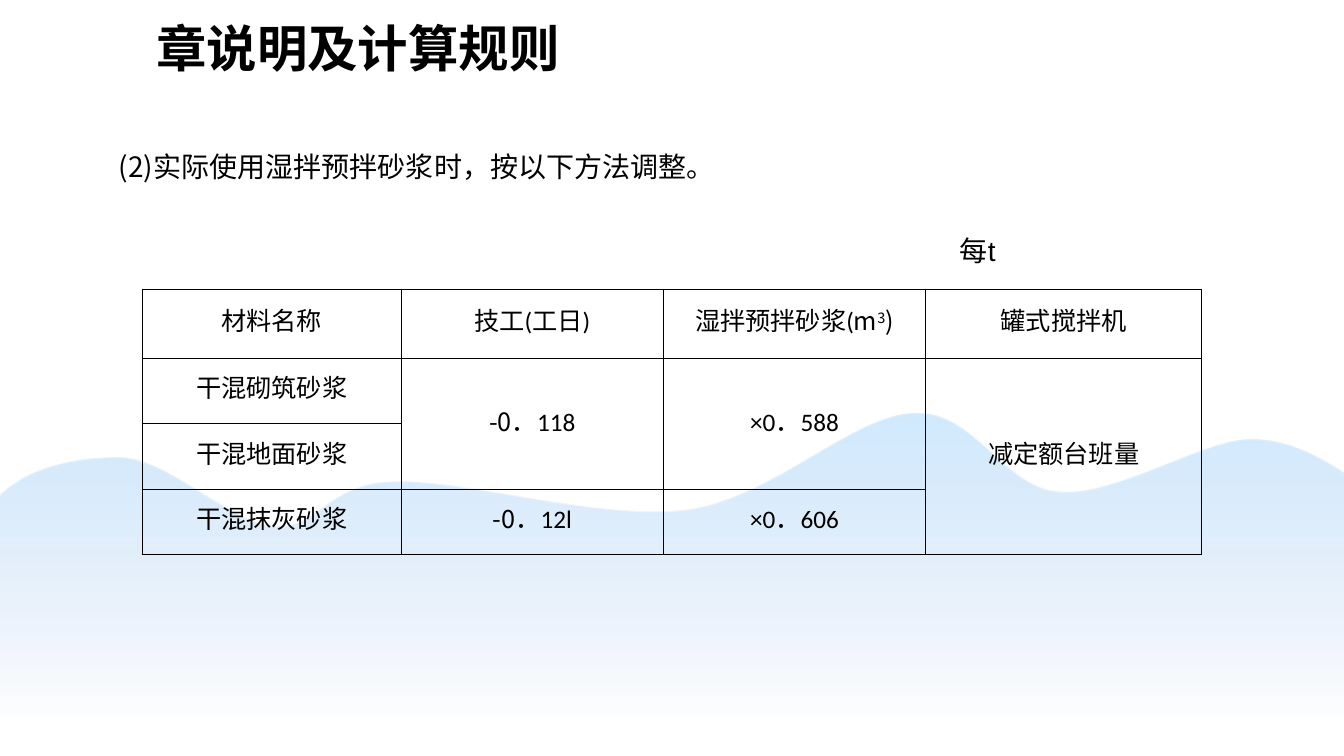
from pptx import Presentation
from pptx import util as u
from pptx.dml.color import RGBColor
from pptx.enum import text
from pptx.oxml import ns
from lxml import etree

SANS = "Noto Sans CJK SC"
BLACK = "000000"

WAVE_BOX = (-0.8, 4.1, 14.72, 4.28)
WAVE_START = (-0.23, 5.26)
# Two control points and an end point for each curve.
WAVE_CURVES = [
    [(0, 4.67), (0.67, 4.54), (1.17, 4.54)],
    [(1.66, 4.53), (2.26, 5.18), (2.71, 5.22)],
    [(3.17, 5.26), (3.22, 4.8), (3.9, 4.78)],
    [(4.58, 4.75), (5.95, 5.17), (6.81, 5.06)],
    [(7.67, 4.94), (8.44, 4.13), (9.06, 4.1)],
    [(9.67, 4.07), (9.95, 4.84), (10.5, 4.88)],
    [(11.05, 4.93), (11.88, 4.39), (12.37, 4.36)],
    [(12.85, 4.34), (13.25, 4.65), (13.43, 4.75)],
    [(13.61, 4.85), (13.44, 4.42), (13.43, 4.98)],
    [(13.43, 5.53), (14.56, 7.52), (13.39, 8.07)],
    [(12.23, 8.62), (8.71, 8.26), (6.43, 8.26)],
    [(4.16, 8.26), (0.85, 8.57), (-0.26, 8.07)],
    [(-1.37, 7.57), (-0.47, 5.85), (-0.23, 5.26)],
]
# Each cell is a list of (text, font, baseline) spans.
ROWS = [
    [[("材料名称", "Calibri", 0)], [("技工(工日)", "Calibri", 0)],
     [("湿拌预拌砂浆(", "Calibri", 0), ("m", SANS, 0), ("3", SANS, 30), (")", SANS, 0)],
     [("罐式搅拌机", "Calibri", 0)]],
    [[("干混砌筑砂浆", "Calibri", 0)], [("-0", SANS, 0), ("．118", "Calibri", 0)],
     [("×0．588", "Calibri", 0)], [("减定额台班量", "Calibri", 0)]],
    [[("干混地面砂浆", "Calibri", 0)], [], [], []],
    [[("干混抹灰砂浆", "Calibri", 0)], [("-0", SANS, 0), ("．12l", "Calibri", 0)],
     [("×0．606", "Calibri", 0)], []],
]
MERGES = [((1, 1), (2, 1)), ((1, 2), (2, 2)), ((1, 3), (3, 3))]


def color(code):
    return RGBColor.from_string(code)


def assign(target, values):
    for name, value in values.items():
        setattr(target, name, value)


def frame_values(*lengths):
    names = ("left", "top", "width", "height")
    return {name: u.Inches(value) for name, value in zip(names, lengths)}


class SlideMaker:
    def __init__(self, page):
        self.page = page

    def spans(self, para, parts, size, bold=False):
        for words, font, baseline in parts:
            span = para.add_run()
            span.text = words
            assign(span.font, {"name": font, "size": u.Pt(size), "bold": bold})
            span.font.color.rgb = color(BLACK)
            props = span._r.get_or_add_rPr()
            etree.SubElement(props, ns.qn("a:ea"), typeface=SANS)
            if baseline:
                props.set("baseline", str(baseline * 1000))

    def place(self, holder, box, frame):
        assign(holder, frame_values(*box))
        assign(holder.text_frame, {"auto_size": text.MSO_AUTO_SIZE.NONE, **frame})

    def title(self, words):
        holder = self.page.shapes.title
        self.place(holder, (1.45, 0.12, 4.26, 0.71),
                   {"word_wrap": False, "vertical_anchor": text.MSO_ANCHOR.TOP})
        para = holder.text_frame.paragraphs[0]
        para.alignment = text.PP_ALIGN.LEFT
        self.spans(para, [(words, "Arial", 0)], 36, bold=True)

    def body(self, lines):
        """Plain lines, each given as (indent, space before, spans)."""
        holder = self.page.placeholders[1]
        self.place(holder, (0.83, 1.27, 11.56, 1.62),
                   {"word_wrap": True, "margin_top": u.Inches(0.13),
                    "vertical_anchor": text.MSO_ANCHOR.TOP})
        for index, (indent, before, parts) in enumerate(lines):
            frame = holder.text_frame
            para = frame.add_paragraph() if index else frame.paragraphs[0]
            assign(para, {"alignment": text.PP_ALIGN.LEFT, "line_spacing": u.Pt(30),
                          "space_before": u.Pt(before)})
            props = para._p.get_or_add_pPr()
            props.set("marL", str(u.Inches(indent)))
            props.set("indent", "0")
            etree.SubElement(props, ns.qn("a:buNone"))
            self.spans(para, parts, 20)

    def wave(self, box, start, curves, stops):
        builder = self.page.shapes.build_freeform(*(u.Inches(v) for v in start))
        ends = [tuple(u.Inches(v) for v in curve[-1]) for curve in curves]
        builder.add_line_segments(ends, close=True)
        shape = builder.convert_to_shape()
        assign(shape, frame_values(*box))
        self.bend(shape, start, curves)
        shape.shadow.inherit = False
        shape.line.fill.background()
        shape.fill.gradient()
        shape.fill.gradient_angle = 270
        for stop, (position, code, _) in zip(shape.fill.gradient_stops, stops):
            stop.position = position
            stop.color.rgb = color(code)
        inks = shape._element.spPr.iter(ns.qn("a:srgbClr"))
        for ink, (_, _, opacity) in zip(inks, stops):
            etree.SubElement(ink, ns.qn("a:alpha"), val=str(opacity * 1000))
        self.page.shapes._spTree.insert(2, shape._element)

    def bend(self, shape, start, curves):
        """Turn the straight segments of a freeform into cubic curves."""
        outline = next(shape._element.iter(ns.qn("a:path")))
        outline.set("w", str(shape.width))
        outline.set("h", str(shape.height))
        for step in list(outline):
            outline.remove(step)
        steps = [("a:moveTo", [start])]
        steps += [("a:cubicBezTo", curve) for curve in curves]
        for tag, points in steps + [("a:close", [])]:
            step = etree.SubElement(outline, ns.qn(tag))
            for x, y in points:
                etree.SubElement(step, ns.qn("a:pt"), x=str(u.Inches(x) - shape.left),
                                 y=str(u.Inches(y) - shape.top))

    def borders(self, cell):
        props = cell._tc.get_or_add_tcPr()
        for index, side in enumerate(("lnL", "lnR", "lnT", "lnB")):
            line = etree.Element(ns.qn("a:" + side), w=str(u.Pt(1)))
            fill = etree.SubElement(line, ns.qn("a:solidFill"))
            etree.SubElement(fill, ns.qn("a:srgbClr"), val=BLACK)
            props.insert(index, line)

    def table(self, rows, merges, left, top, widths, heights):
        box = frame_values(left, top, sum(widths), sum(heights))
        table = self.page.shapes.add_table(len(rows), len(widths), **box).table
        assign(table, {"first_row": False, "horz_banding": False})
        for column, width in zip(table.columns, widths):
            column.width = u.Inches(width)
        for row, height, cells in zip(table.rows, heights, rows):
            row.height = u.Inches(height)
            for cell, parts in zip(row.cells, cells):
                assign(cell, {"margin_left": 0, "margin_right": 0, "margin_top": 0,
                              "margin_bottom": 0,
                              "vertical_anchor": text.MSO_ANCHOR.MIDDLE})
                cell.fill.background()
                self.borders(cell)
                para = cell.text_frame.paragraphs[0]
                assign(para, {"alignment": text.PP_ALIGN.CENTER,
                              "line_spacing": u.Pt(20)})
                self.spans(para, parts, 18)
        for first, last in merges:
            table.cell(*first).merge(table.cell(*last))


def main():
    deck = Presentation()
    assign(deck, {"slide_width": u.Inches(13.33), "slide_height": u.Inches(7.5)})
    maker = SlideMaker(deck.slides.add_slide(deck.slide_layouts[1]))
    maker.wave(WAVE_BOX, WAVE_START, WAVE_CURVES,
               [(0, "2CA2FA", 22), (0.71, "064EC4", 0)])
    maker.title("章说明及计算规则")
    maker.body([
        (0.25, 0, [("(2)", SANS, 0),
                   ("实际使用湿拌预拌砂浆时，按以下方法调整。", "Arial", 0)]),
        (8.59, 30, [("每t", "Arial", 0)]),
    ])
    maker.table(ROWS, MERGES, 1.41, 2.87,
                [2.57, 2.6, 2.6, 2.74], [0.69, 0.64, 0.66, 0.64])
    deck.save("out.pptx")


if __name__ == "__main__":
    main()
